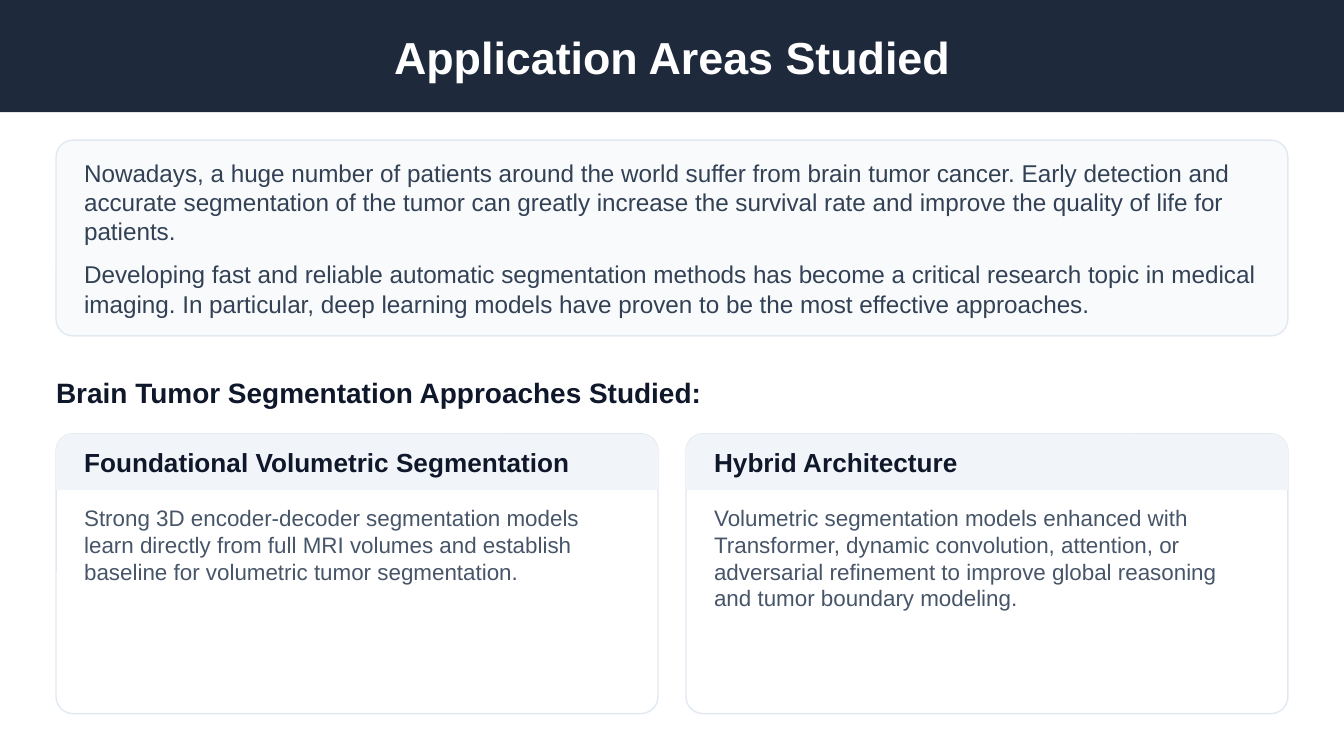
from pptx import Presentation
from pptx.dml.color import RGBColor
from pptx.enum.shapes import MSO_SHAPE as Form
from pptx.enum.text import MSO_ANCHOR as Anchor, MSO_AUTO_SIZE as Fit, PP_ALIGN as Align
from pptx.util import Cm, Pt

NAVY = RGBColor(0x1E, 0x29, 0x3B)
INK = RGBColor(0x0F, 0x17, 0x2A)
SLATE = RGBColor(0x33, 0x41, 0x55)
GREY = RGBColor(0x47, 0x55, 0x69)
EDGE = RGBColor(0xE2, 0xE8, 0xF0)
MIST = RGBColor(0xF1, 0xF5, 0xF9)
PALE = RGBColor(0xF8, 0xFA, 0xFC)
WHITE = RGBColor(0xFF, 0xFF, 0xFF)

# Lengths in centimetres
WIDE, HIGH = 25.4, 14.29
EDGE_X = 1.06
PAD = EDGE_X / 2
ROW = 1.06
BAR = 2 * ROW
FULL = WIDE - 2 * EDGE_X

TITLE = {"size": Pt(24), "bold": True, "color": WHITE}
INTRO = {"size": Pt(13), "bold": False, "color": SLATE}
HEAD = {"size": Pt(15), "bold": True, "color": INK}
NAME = {"size": Pt(14), "bold": True, "color": INK}
BODY = {"size": Pt(12), "bold": False, "color": GREY}

PARAS = [
    "Nowadays, a huge number of patients around the world suffer from brain tumor cancer. "
    "Early detection and accurate segmentation of the tumor can greatly increase the "
    "survival rate and improve the quality of life for patients.",
    "Developing fast and reliable automatic segmentation methods has become a critical "
    "research topic in medical imaging. In particular, deep learning models have proven "
    "to be the most effective approaches.",
]
CARDS = [
    ("Foundational Volumetric Segmentation",
     "Strong 3D encoder-decoder segmentation models learn directly from full MRI volumes "
     "and establish baseline for volumetric tumor segmentation."),
    ("Hybrid Architecture",
     "Volumetric segmentation models enhanced with Transformer, dynamic convolution, "
     "attention, or adversarial refinement to improve global reasoning and tumor "
     "boundary modeling."),
]


def add_form(shapes, form, box, fill, line=None, radius=None):
    shape = shapes.add_shape(form, *map(Cm, box))
    shape.shadow.inherit = False
    shape.fill.solid()
    shape.fill.fore_color.rgb = fill
    if line is None:
        shape.line.fill.background()
    else:
        shape.line.color.rgb = line
        shape.line.width = Pt(0.75)
    if radius is not None:
        shape.adjustments[0] = radius / min(box[2:])
    return shape


def fill_text(shape, paras, style, anchor=Anchor.MIDDLE, align=Align.LEFT):
    frame = shape.text_frame
    layout = {"word_wrap": True, "auto_size": Fit.NONE, "vertical_anchor": anchor,
              "margin_left": 0, "margin_right": 0, "margin_top": 0, "margin_bottom": 0}
    for key, value in layout.items():
        setattr(frame, key, value)
    for i, text in enumerate(paras):
        para = frame.add_paragraph() if i else frame.paragraphs[0]
        para.alignment = align
        if i:
            para.space_before = Pt(7.5)
        run = para.add_run()
        run.text = text
        run.font.name = "Arial"
        run.font.color.rgb = style["color"]
        for key in ("size", "bold"):
            setattr(run.font, key, style[key])


def add_text(shapes, box, paras, style, anchor=Anchor.MIDDLE):
    fill_text(shapes.add_textbox(*map(Cm, box)), paras, style, anchor)


def add_header(slide, box, text):
    x, y, w, h = box
    title = slide.shapes.title
    bar = add_form(slide.shapes, Form.RECTANGLE, box, NAVY)
    title.element.addprevious(bar.element)
    place = {"left": x + w / 8, "top": y, "width": w * 0.75, "height": h}
    for key, value in place.items():
        setattr(title, key, Cm(value))
    fill_text(title, [text], TITLE, align=Align.CENTER)


def add_intro(slide, box, paras):
    x, y, w, h = box
    shapes = slide.shapes.add_group_shape().shapes
    add_form(shapes, Form.ROUNDED_RECTANGLE, box, PALE, EDGE, 0.32)
    add_text(shapes, (x + PAD, y + PAD / 2, w - 2 * PAD, h - PAD), paras, INTRO)


def add_card(slide, box, name, text):
    x, y, w, h = box
    inner = w - 2 * PAD
    shapes = slide.shapes.add_group_shape().shapes
    add_form(shapes, Form.ROUNDED_RECTANGLE, box, WHITE, EDGE, 0.32)
    add_form(shapes, Form.ROUNDED_RECTANGLE, (x, y, w, ROW), MIST, radius=0.32)
    add_form(shapes, Form.RECTANGLE, (x, y + ROW / 2, w, ROW / 2), MIST)
    add_text(shapes, (x + PAD, y, inner, ROW), [name], NAME)
    top = ROW + PAD / 2
    add_text(shapes, (x + PAD, y + top, inner, h - top - PAD), [text], BODY, Anchor.TOP)


def main():
    deck = Presentation()
    deck.slide_width, deck.slide_height = Cm(WIDE), Cm(HIGH)
    slide = deck.slides.add_slide(deck.slide_layouts[5])
    add_header(slide, (0, 0, WIDE, BAR), "Application Areas Studied")
    add_intro(slide, (EDGE_X, BAR + PAD, FULL, 3.7), PARAS)
    add_text(slide.shapes, (EDGE_X, 6.88, FULL, ROW),
             ["Brain Tumor Segmentation Approaches Studied:"], HEAD)
    width = (FULL - PAD) / 2
    for i, (name, text) in enumerate(CARDS):
        add_card(slide, (EDGE_X + i * (width + PAD), 8.2, width, 5.29), name, text)
    deck.save("out.pptx")


if __name__ == "__main__":
    main()
